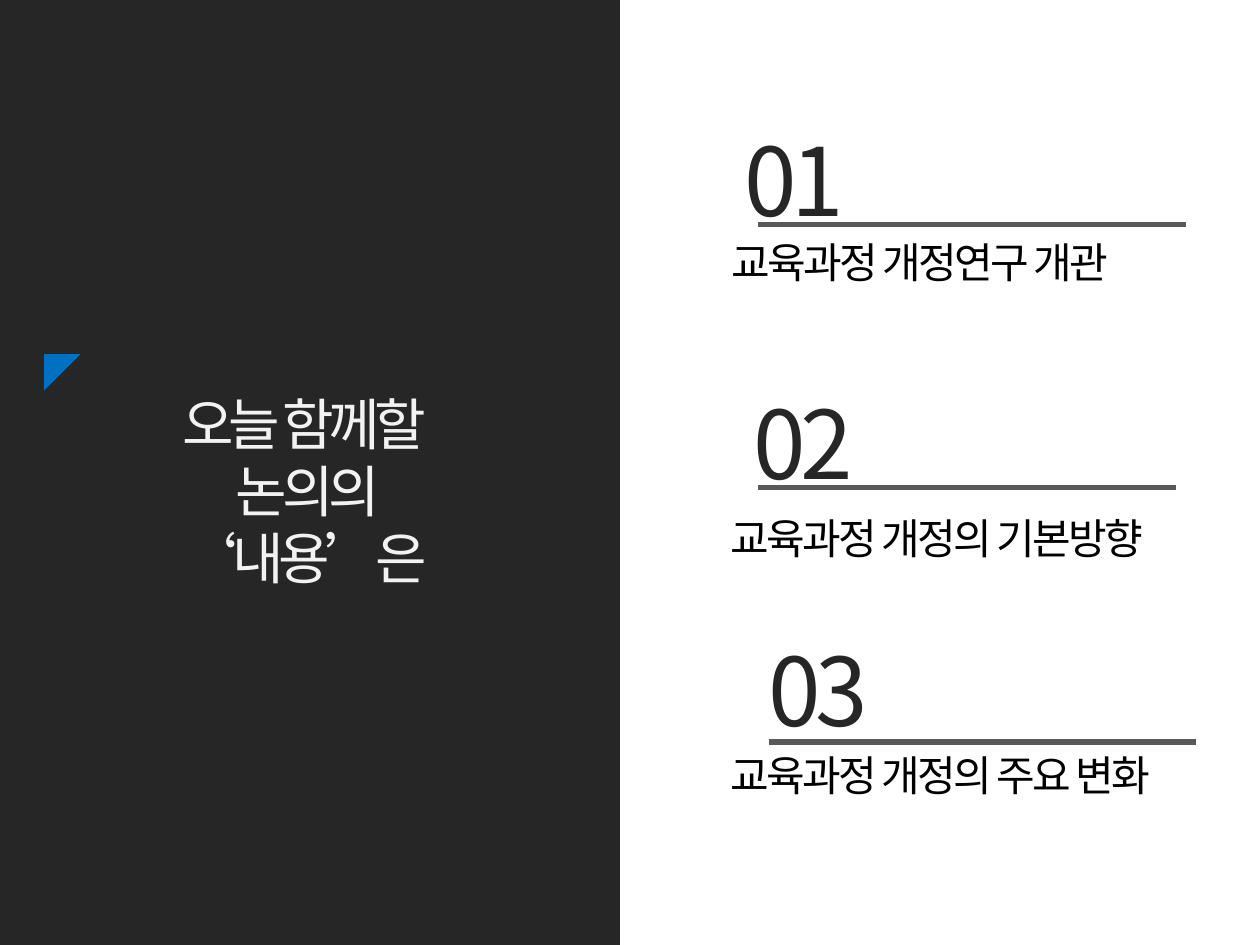
from lxml.etree import SubElement
from pptx import Presentation
from pptx.dml.color import RGBColor
from pptx.enum.shapes import MSO_CONNECTOR, MSO_SHAPE
from pptx.enum.text import MSO_AUTO_SIZE, PP_ALIGN
from pptx.oxml.ns import qn
from pptx.util import Inches, Pt

FONT = "Noto Sans CJK KR"
DARK, GREY, BLUE, PALE, BLACK = "262626", "595959", "0070C0", "F2F2F2", "000000"
WIDE, HIGH = 10, 7.5
TITLE = ["오늘 함께할 ", "논의의", "‘내용’은 "]
ITEMS = [
    dict(num="01", label="교육과정 개정연구 개관", rule=(6.02, 1.78, 3.39),
         head=(5.81, 0.92, 2.64), foot=(5.71, 1.83, 3.54)),
    dict(num="02", label="교육과정 개정의 기본방향", rule=(6.02, 3.87, 3.31),
         head=(5.88, 3.01, 1.89), foot=(5.7, 4.02, 4.44), wrap=True),
    dict(num="03", label="교육과정 개정의 주요 변화", rule=(6.1, 5.89, 3.39),
         head=(6, 4.97, 1.13), foot=(5.7, 5.9, 3.95)),
]


def color(code):
    return RGBColor.from_string(code)


def block(slide, kind, box, fill, turn=0):
    shape = slide.shapes.add_shape(kind, *map(Inches, box))
    shape.shadow.inherit = False
    shape.fill.solid()
    shape.fill.fore_color.rgb = color(fill)
    shape.line.fill.background()
    shape.rotation = turn


def write(slide, lines, box, size, ink, gap, align=PP_ALIGN.LEFT, wrap=False):
    frame = slide.shapes.add_textbox(*map(Inches, box)).text_frame
    frame.word_wrap = wrap
    frame.auto_size = MSO_AUTO_SIZE.SHAPE_TO_FIT_TEXT
    for i, line in enumerate(lines):
        para = frame.paragraphs[0] if i == 0 else frame.add_paragraph()
        para.alignment = align
        run = para.add_run()
        run.text = line
        run.font.size = Pt(size)
        run.font.name = FONT
        run.font.color.rgb = color(ink)
        props = run.font._element
        props.set("spc", str(int(gap * 100)))
        SubElement(props, qn("a:ea")).set("typeface", FONT)


def rule(slide, left, top, width):
    ends = map(Inches, (left, top, left + width, top))
    line = slide.shapes.add_connector(MSO_CONNECTOR.STRAIGHT, *ends)
    line.line.color.rgb = color(GREY)
    line.line.width = Pt(3)
    SubElement(line._element.spPr, qn("a:effectLst"))


def main():
    """Build the contents slide and save it."""
    deck = Presentation()
    deck.slide_width, deck.slide_height = Inches(WIDE), Inches(HIGH)
    slide = deck.slides.add_slide(deck.slide_layouts[6])
    block(slide, MSO_SHAPE.RECTANGLE, (0, 0, 4.92, HIGH), DARK)
    for item in ITEMS:
        write(slide, [item["label"]], (*item["foot"], 0.5), 24, BLACK, -1.5,
              wrap=item.get("wrap", False))
        write(slide, [item["num"]], (*item["head"], 1.01), 54, DARK, -3)
        rule(slide, *item["rule"])
    write(slide, TITLE, (1.22, 3.04, 2.45, 1.72), 32, PALE, -3, align=PP_ALIGN.CENTER)
    block(slide, MSO_SHAPE.RIGHT_TRIANGLE, (0.35, 2.81, 0.29, 0.29), BLUE, turn=90)
    deck.save("out.pptx")


if __name__ == "__main__":
    main()
